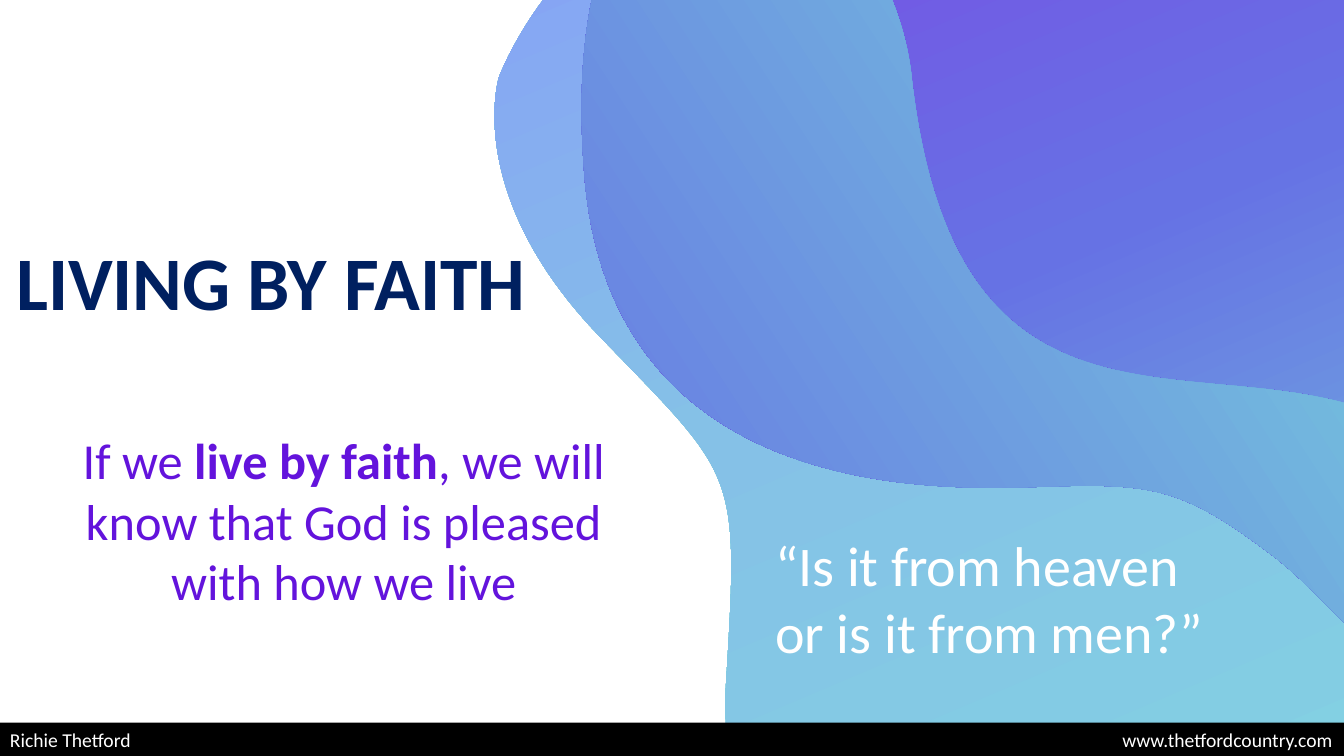
from math import cos, radians, sin

from lxml import etree
from pptx import Presentation
from pptx.dml.color import RGBColor
from pptx.enum.shapes import MSO_SHAPE
from pptx.enum.text import MSO_ANCHOR, MSO_AUTO_SIZE, PP_ALIGN
from pptx.oxml.ns import qn
from pptx.util import Pt

PX = 9144
WIDE, HIGH = 1333, 750
TURN = 157
FONT = "Calibri"
RECT = MSO_SHAPE.RECTANGLE
TOP, MID = MSO_ANCHOR.TOP, MSO_ANCHOR.MIDDLE
LEFT, CENTER = PP_ALIGN.LEFT, PP_ALIGN.CENTER
FIXED = MSO_AUTO_SIZE.NONE
HUES = {
    "navy": "002060", "violet": "6313DC", "white": "FFFFFF", "black": "000000",
    "aqua": "80DEDE", "sky": "85C1E7", "lilac": "878CFF",
    "mint": "7CEFD8", "blue": "6672E4", "purple": "882BE5",
}
WAVES = [
    ((531, -246, 949, 1260), 90, [(0, "aqua"), (54, "sky"), (100, "lilac")], [
        (920, 106), (971, 556), (1290, 315), (1467, 496),
        (1645, 676), (1581, 811), (1528, 840), (1475, 869), (1429, 866), (1375, 787),
        (1320, 707), (1153, 796), (1038, 856), (924, 916), (706, 893), (720, 679),
        (733, 464), (732, 476), (595, 334), (458, 192), (495, 76), (495, 76),
        (495, 76), (568, -115), (737, -98), (907, -81), (920, 106), (920, 106)]),
    ((552, -310, 958, 1176), 90, [(0, "mint"), (51, "blue"), (100, "purple")], [
        (732, -186), (732, -186), (556, -159), (579, 167),
        (601, 492), (918, 487), (1031, 483), (1144, 479), (1172, 483), (1262, 551),
        (1352, 620), (1413, 755), (1528, 626), (1643, 496), (1426, 358), (1396, 301),
        (1366, 244), (1422, 99), (1371, 43), (1321, -12), (1286, -80), (1049, -60),
        (1049, -60), (933, -22), (844, -146), (844, -146), (788, -214), (732, -186)]),
    ((571, -218, 828, 1107), 170, [(0, "purple"), (19, "blue"), (100, "mint")], [
        (579, 167), (568, 19), (599, -67), (635, -118),
        (661, -127), (689, -130), (721, -128), (890, -111), (904, 76), (904, 76),
        (955, 526), (1274, 285), (1451, 466), (1499, 514), (1529, 560), (1547, 600),
        (1542, 609), (1536, 617), (1529, 625), (1413, 755), (1352, 620), (1262, 551),
        (1172, 483), (1144, 479), (1031, 483), (918, 487), (601, 492), (579, 167)]),
]


def tint(name):
    """Return the named colour."""
    return RGBColor.from_string(HUES[name])


def place(shape, box):
    """Move a shape to a box given in px."""
    shape.left, shape.top, shape.width, shape.height = (n * PX for n in box)


def write(shape, runs, size, hue, align=LEFT, inset=(10, 5), anchor=TOP):
    """Fill a shape with one paragraph of (text, bold) runs."""
    frame = shape.text_frame
    frame.word_wrap = True
    frame.auto_size = FIXED
    frame.vertical_anchor = anchor
    frame.margin_left = frame.margin_right = inset[0] * PX
    frame.margin_top = frame.margin_bottom = inset[1] * PX
    para = frame.paragraphs[0]
    para.alignment = align
    para.line_spacing = 1.0
    for text, bold in runs:
        for row, line in enumerate(text.split("\n")):
            if row:
                para.add_line_break()
            run = para.add_run()
            run.text = line
            run.font.name = FONT
            run.font.size = Pt(size)
            run.font.bold = bold
            run.font.color.rgb = tint(hue)
    return para


def shade(shape, angle, stops):
    """Give a shape a linear gradient."""
    shape.fill.gradient()
    grad = shape.element.spPr.find(qn("a:gradFill"))
    grad.find(qn("a:lin")).set("ang", str(angle * 60000))
    ramp = grad.find(qn("a:gsLst"))
    for old in list(ramp):
        ramp.remove(old)
    for pos, name in stops:
        stop = etree.SubElement(ramp, qn("a:gs"), pos=str(pos * 1000))
        etree.SubElement(stop, qn("a:srgbClr"), val=HUES[name])


def wave(slide, box, angle, stops, points):
    """Draw a turned, curved blob through points given on the slide."""
    x, y, w, h = box
    form = slide.shapes.build_freeform(0, 0, scale=PX)
    form.add_line_segments([(w, 0), (w, h), (0, h)])
    shape = form.convert_to_shape(x * PX, y * PX)
    shape.rotation = TURN
    shape.shadow.inherit = False
    shape.line.fill.background()
    shade(shape, angle, stops)

    track = next(shape.element.iter(qn("a:path")))
    track.set("w", str(w * PX))
    track.set("h", str(h * PX))
    for old in list(track):
        track.remove(old)
    c, s = cos(radians(TURN)), sin(radians(TURN))
    for i, (px, py) in enumerate(points):
        if i == 0:
            step = etree.SubElement(track, qn("a:moveTo"))
        elif i % 3 == 1:
            step = etree.SubElement(track, qn("a:cubicBezTo"))
        dx, dy = px - x - w / 2, py - y - h / 2
        etree.SubElement(step, qn("a:pt"),
                         x=str(round((w / 2 + dx * c + dy * s) * PX)),
                         y=str(round((h / 2 - dx * s + dy * c) * PX)))
    etree.SubElement(track, qn("a:close"))


def head(slide, box):
    """Set the title in front of the waves."""
    title = slide.shapes.title
    title.element.getparent().append(title.element)
    place(title, box)
    write(title, [("LIVING BY FAITH", True)], 54, "navy", inset=(0, 0))


def note(slide, box, runs, size, hue, align=LEFT):
    """Add a block of text."""
    x, y, w, h = (n * PX for n in box)
    write(slide.shapes.add_textbox(x, y, w, h), runs, size, hue, align)


def foot(slide, box):
    """Add the black bar with the author at left and the site at right."""
    x, y, w, h = box
    bar = slide.shapes.add_shape(RECT, x * PX, y * PX, w * PX, h * PX)
    bar.shadow.inherit = False
    bar.fill.solid()
    bar.fill.fore_color.rgb = tint("black")
    bar.line.fill.background()
    para = write(bar, [("Richie Thetford\twww.thetfordcountry.com", False)],
                 14, "white", inset=(10, 0), anchor=MID)
    tabs = etree.SubElement(para._p.get_or_add_pPr(), qn("a:tabLst"))
    etree.SubElement(tabs, qn("a:tab"), pos=str((w - 21) * PX), algn="r")


def main():
    """Build and save the slide."""
    deck = Presentation()
    deck.slide_width, deck.slide_height = WIDE * PX, HIGH * PX
    slide = deck.slides.add_slide(deck.slide_layouts[5])
    for item in WAVES:
        wave(slide, *item)
    head(slide, (16, 233, 530, 91))
    note(slide, (16, 421, 650, 192),
         [("If we ", False), ("live by faith", True),
          (", we will know that God is pleased\nwith how we live", False)],
         36, "violet", CENTER)
    foot(slide, (0, 717, WIDE, 33))
    note(slide, (759, 521, 448, 145),
         [("“Is it from heaven\nor is it from men?”", False)], 40, "white")
    deck.save("out.pptx")


if __name__ == "__main__":
    main()
